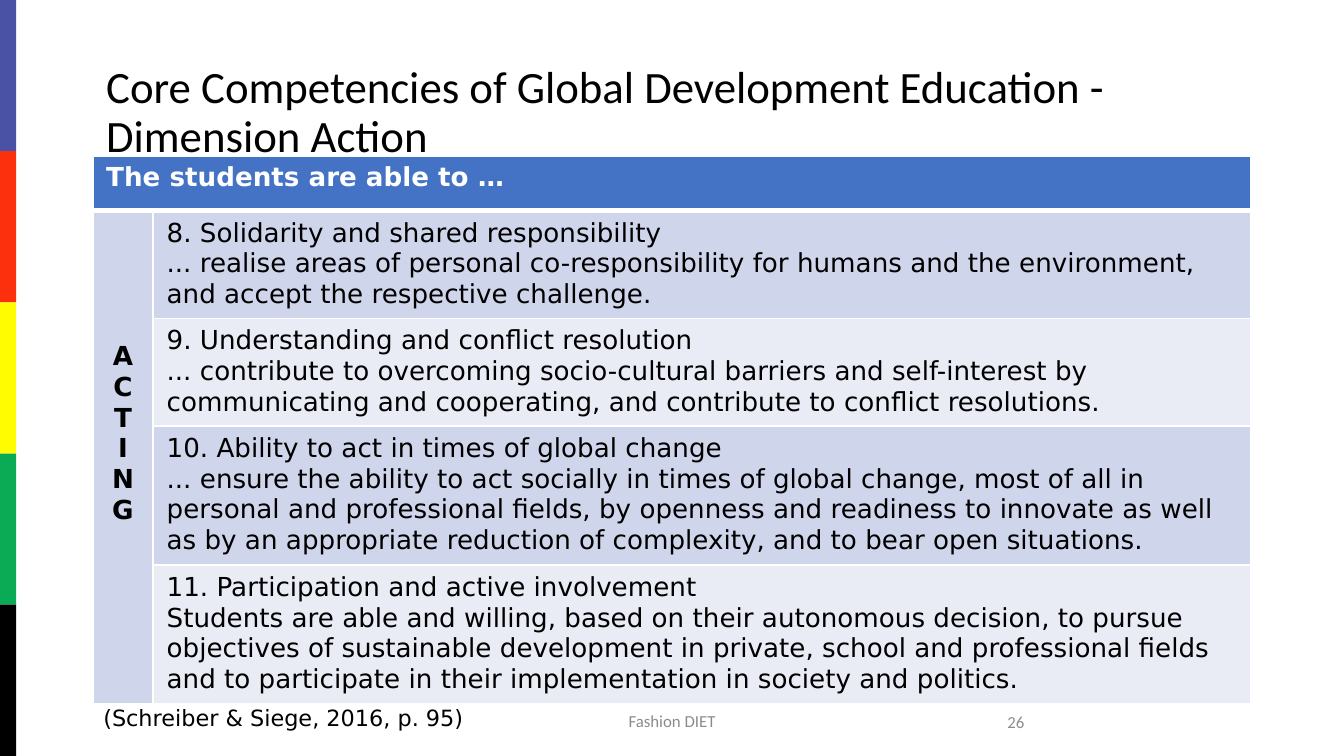
from lxml.etree import SubElement
from pptx import Presentation
from pptx.dml.color import RGBColor
from pptx.enum.shapes import MSO_SHAPE as Shape
from pptx.enum.text import MSO_ANCHOR as Anchor, MSO_AUTO_SIZE as AutoSize, PP_ALIGN as Align
from pptx.oxml.ns import qn
from pptx.util import Inches, Pt

WIDTH, HEIGHT = 10, 5.625
LEFT, CONTENT_WIDTH = 0.69, 8.62
BANDS = ["4952A4", "FC300D", "FFFB00", "0BAA54", "000000"]
COLUMNS = [0.45, 8.17]
ROWS = [0.41, 0.8, 0.8, 1.03, 1.03]
HEADER_FILL, ROW_FILLS = "4472C4", ["CFD5EA", "E9EBF5"]
LETTER_HEIGHT = 0.23

TITLE = {"name": "Calibri", "size": 24, "color": "000000"}
FOOTER = {"name": "Calibri", "size": 9, "color": "8C8C8C"}
SOURCE = {"name": "DejaVu Sans", "size": 12, "color": "000000"}
BODY = {"name": "DejaVu Sans", "size": 14, "color": "000000", "bold": False}
STRONG = {**BODY, "bold": True}
HEADER = {**STRONG, "color": "FFFFFF"}

COMPETENCIES = [
    ("8. Solidarity and shared responsibility",
     "... realise areas of personal co-responsibility for humans and the environment, "
     "and accept the respective challenge."),
    ("9. Understanding and conflict resolution",
     "... contribute to overcoming socio-cultural barriers and self-interest by "
     "communicating and cooperating, and contribute to conflict resolutions."),
    ("10. Ability to act in times of global change",
     "... ensure the ability to act socially in times of global change, most of all in "
     "personal and professional fields, by openness and readiness to innovate as well "
     "as by an appropriate reduction of complexity, and to bear open situations."),
    ("11. Participation and active involvement",
     "Students are able and willing, based on their autonomous decision, to pursue "
     "objectives of sustainable development in private, school and professional fields "
     "and to participate in their implementation in society and politics."),
]


def rgb(value):
    return RGBColor.from_string(value)


def inches(*lengths):
    return [Inches(length) for length in lengths]


def write(frame, text, style, align=Align.LEFT):
    """Fill a text frame; a vertical tab in the text is a line break."""
    frame.text = text
    for para in frame.paragraphs:
        para.alignment = align
        for line_break in para._p.findall(qn("a:br")):
            SubElement(line_break, qn("a:rPr"), sz=str(style["size"] * 100))
        for span in para.runs:
            for key, value in style.items():
                if key == "color":
                    span.font.color.rgb = rgb(value)
                else:
                    setattr(span.font, key, Pt(value) if key == "size" else value)


def add_bands(page):
    group = page.shapes.add_group_shape()
    height = HEIGHT / len(BANDS)
    for index, color in enumerate(BANDS):
        band = group.shapes.add_shape(Shape.RECTANGLE, *inches(0, index * height, 0.12, height))
        band.shadow.inherit = False
        band.fill.solid()
        band.fill.fore_color.rgb = rgb(color)
        band.line.fill.background()


def set_title(page, text):
    title = page.shapes.title
    title.left, title.top, title.width, title.height = inches(LEFT, 0.3, CONTENT_WIDTH, 1.09)
    frame = title.text_frame
    write(frame, text, TITLE)
    frame.auto_size = AutoSize.NONE
    frame.vertical_anchor = Anchor.MIDDLE
    frame.paragraphs[0].line_spacing = 0.9


def add_text(page, area, text, style, align=Align.LEFT, anchor=Anchor.MIDDLE):
    frame = page.shapes.add_textbox(*inches(*area)).text_frame
    frame.word_wrap = True
    frame.vertical_anchor = anchor
    write(frame, text, style, align)


def set_borders(cell, **widths):
    properties = cell._tc.get_or_add_tcPr()
    for side in "LRTB":
        line = SubElement(properties, qn(f"a:ln{side}"), w=str(Pt(widths.get(side, 1))))
        SubElement(SubElement(line, qn("a:solidFill")), qn("a:srgbClr"), val="FFFFFF")


def add_competency_table(page):
    area = inches(LEFT, 1.16, CONTENT_WIDTH, sum(ROWS))
    table = page.shapes.add_table(len(ROWS), len(COLUMNS), *area).table
    table.first_row = table.horz_banding = False
    for column, width in zip(table.columns, COLUMNS):
        column.width = Inches(width)

    # Row heights, borders and banded fills
    for index, height in enumerate(ROWS):
        table.rows[index].height = Inches(height)
        for cell in table.rows[index].cells:
            set_borders(cell, B=3 if index == 0 else 1, T=3 if index == 1 else 1)
            cell.fill.solid()
            cell.fill.fore_color.rgb = rgb(ROW_FILLS[(index - 1) % 2] if index else HEADER_FILL)

    # Header across both columns
    header = table.cell(0, 0)
    header.merge(table.cell(0, 1))
    write(header.text_frame, "The students are able to …", HEADER)

    # Dimension name, one letter a line, set four lines down
    dimension = table.cell(1, 0)
    dimension.merge(table.cell(len(ROWS) - 1, 0))
    dimension.margin_top = Inches(0.05 + 4 * LETTER_HEIGHT)
    write(dimension.text_frame, "\n".join("ACTING"), STRONG, Align.CENTER)

    for row, lines in enumerate(COMPETENCIES, start=1):
        write(table.cell(row, 1).text_frame, "\v".join(lines), BODY)


def main():
    deck = Presentation()
    deck.slide_width, deck.slide_height = inches(WIDTH, HEIGHT)
    page = deck.slides.add_slide(deck.slide_layouts[5])
    add_bands(page)
    set_title(page, "Core Competencies of Global Development Education - Dimension Action")
    add_text(page, (3.31, 5.21, 3.38, 0.3), "Fashion DIET", FOOTER, Align.CENTER)
    add_text(page, (5.47, 5.22, 2.25, 0.3), "26", FOOTER, Align.RIGHT)
    add_competency_table(page)
    add_text(page, (0.67, 5.19, 2.99, 0.3), "(Schreiber & Siege, 2016, p. 95)", SOURCE,
             anchor=Anchor.TOP)
    deck.save("out.pptx")


if __name__ == "__main__":
    main()
